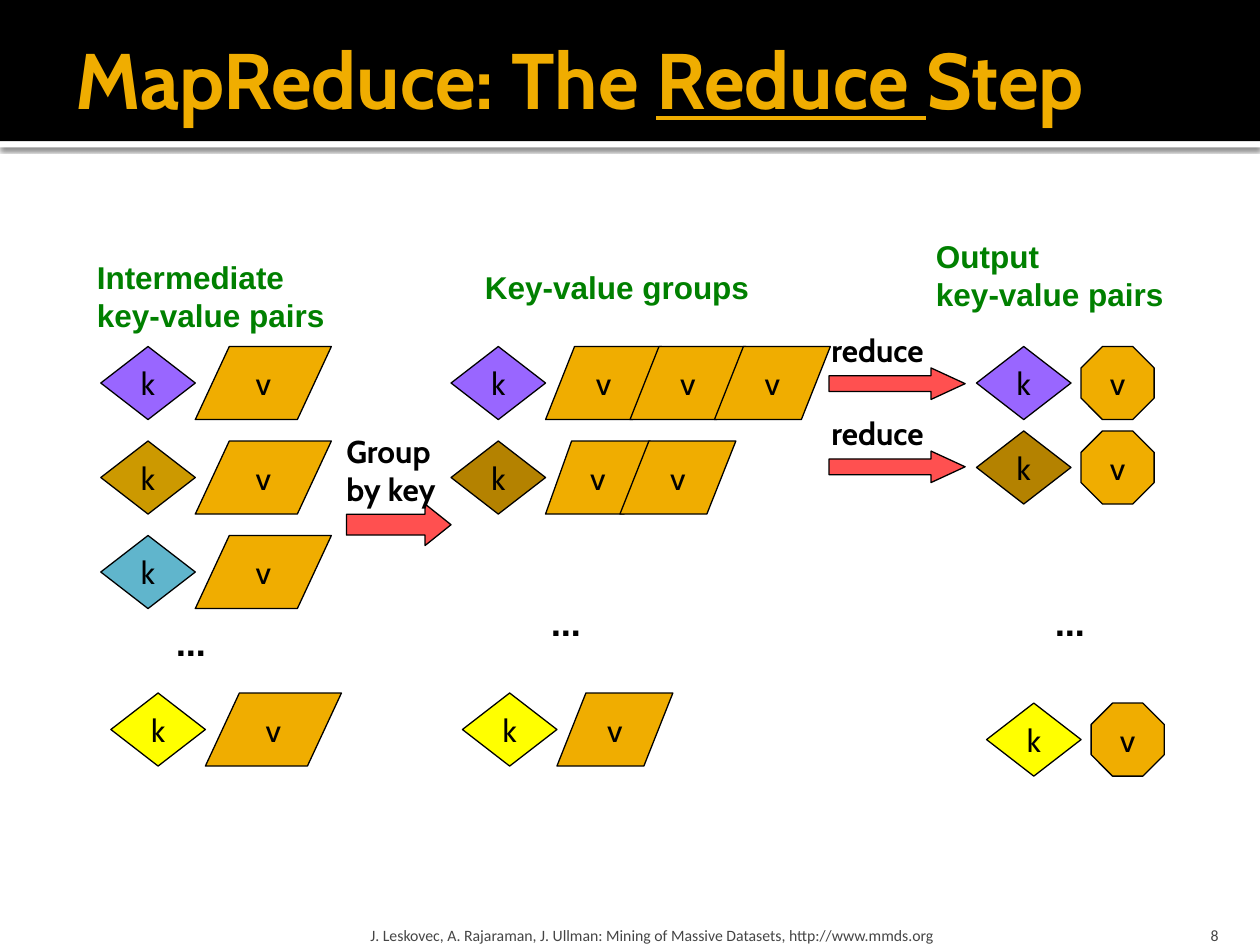
import pptx
import pptx.dml.color
import pptx.enum.shapes
import pptx.enum.text
import pptx.oxml
import pptx.oxml.ns
import pptx.util

Inches = pptx.util.Inches
SHAPE = pptx.enum.shapes.MSO_SHAPE
ALIGN = pptx.enum.text.PP_ALIGN
ANCHOR = pptx.enum.text.MSO_ANCHOR

COLORS = {
    "black": "000000", "white": "FFFFFF", "gold": "F0AD00", "green": "008000",
    "purple": "9966FF", "mustard": "CC9900", "brown": "B48200",
    "teal": "60B5CC", "yellow": "FFFF00", "red": "FF5050", "gray": "454545",
}
KEY_W, CELL_H = 0.75, 0.58


def rgb(name):
    return pptx.dml.color.RGBColor.from_string(COLORS[name])


def format_runs(tf, size, font, color, bold=False, align=ALIGN.LEFT):
    for p in tf.paragraphs:
        p.alignment = align
        for r in p.runs:
            r.font.size = pptx.util.Pt(size)
            r.font.name = font
            r.font.bold = bold
            r.font.color.rgb = rgb(color)


def add_block(slide, kind, box, fill, outlined=True, adjust=(), text=""):
    sp = slide.shapes.add_shape(kind, *map(Inches, box))
    sp.shadow.inherit = False
    sp.fill.solid()
    sp.fill.fore_color.rgb = rgb(fill)
    if outlined:
        sp.line.color.rgb = rgb("black")
        sp.line.width = pptx.util.Pt(0.75)
    else:
        sp.line.fill.background()
    for i, value in enumerate(adjust):
        sp.adjustments[i] = value
    if text:
        tf = sp.text_frame
        tf.word_wrap = False
        tf.vertical_anchor = ANCHOR.MIDDLE
        tf.text = text
        format_runs(tf, 18, "Cabin", "black", align=ALIGN.CENTER)
    return sp


def add_label(slide, box, text, size=18, font="Cabin", color="black", bold=True,
              wrap=False, align=ALIGN.LEFT, anchor=ANCHOR.TOP, margins=None):
    tf = slide.shapes.add_textbox(*map(Inches, box)).text_frame
    tf.word_wrap = wrap
    tf.vertical_anchor = anchor
    if margins:
        (tf.margin_left, tf.margin_top,
         tf.margin_right, tf.margin_bottom) = map(Inches, margins)
    tf.text = text
    format_runs(tf, size, font, color, bold, align)
    return tf


def add_heading(slide, box, text, wrap=True):
    add_label(slide, box, text, font="Arial", color="green", wrap=wrap)


def add_key(slide, x, y, color):
    add_block(slide, SHAPE.DIAMOND, (x, y, KEY_W, CELL_H), color, text="k")


def add_value(slide, x, y, w):
    add_block(slide, SHAPE.PARALLELOGRAM, (x, y, w, CELL_H), "gold",
              adjust=[w / 4 / CELL_H], text="v")


def add_output_pair(slide, x, y, color):
    add_key(slide, x, y, color)
    add_block(slide, SHAPE.OCTAGON, (x + 0.83, y, CELL_H, CELL_H), "gold",
              adjust=[0.293], text="v")


def add_arrow(slide, box, head):
    add_block(slide, SHAPE.RIGHT_ARROW, box, "red", adjust=[0.5, head])


def add_ellipsis(slide, x, y):
    add_label(slide, (x, y, 0.55, 0.5), "…", size=24)


def add_header(slide):
    strip = add_block(slide, SHAPE.RECTANGLE, (0, 1.12, 10, 0.05), "white", outlined=False)
    effects = strip.element.spPr.find(pptx.oxml.ns.qn("a:effectLst"))
    effects.append(pptx.oxml.parse_xml(
        f'<a:outerShdw {pptx.oxml.ns.nsdecls("a")} blurRad="31750" dist="10160" '
        'dir="5400000" algn="tl" rotWithShape="0"><a:srgbClr val="000000">'
        '<a:alpha val="60000"/></a:srgbClr></a:outerShdw>'))
    add_block(slide, SHAPE.RECTANGLE, (0, 0, 10, 1.12), "black", outlined=False)
    tf = add_label(slide, (0.5, 0.08, 9, 1.08), "MapReduce: The ", wrap=True,
                   anchor=ANCHOR.MIDDLE, margins=(0.1, 0.05, 0.05, 0.05))
    for text in ("Reduce ", "Step"):
        r = tf.paragraphs[0].add_run()
        r.text = text
        r.font.underline = text == "Reduce "
    format_runs(tf, 45, "Cabin", "gold", True)


def add_intermediate_pairs(slide):
    add_heading(slide, (0.67, 2, 2.02, 0.71), "Intermediate\nkey-value pairs", wrap=False)
    for x, y, color in ((0.8, 2.75, "purple"), (0.8, 3.5, "mustard"),
                        (0.8, 4.25, "teal"), (0.88, 5.5, "yellow")):
        add_key(slide, x, y, color)
        add_value(slide, x + KEY_W, y, 1.08)
    add_ellipsis(slide, 1.3, 4.83)


def add_groups(slide):
    add_heading(slide, (3.75, 2.08, 2.58, 0.4), "Key-value groups")
    groups = (
        (3.58, 2.75, "purple", [(4.33, 0.92), (5, 0.92), (5.67, 0.92)]),
        (3.58, 3.5, "brown", [(4.33, 0.83), (4.92, 0.92)]),
        (3.67, 5.5, "yellow", [(4.42, 0.92)]),
    )
    for x, y, color, values in groups:
        add_key(slide, x, y, color)
        for value_x, w in values:
            add_value(slide, value_x, y, w)
    add_ellipsis(slide, 4.28, 4.67)


def add_steps(slide):
    add_arrow(slide, (2.75, 4, 0.83, 0.33), 0.625)
    add_label(slide, (2.65, 3.38, 0.91, 0.71), "Group\nby key")
    for y in (2.92, 3.58):
        add_arrow(slide, (6.58, y, 1.08, 0.25), 1.083)
        add_label(slide, (6.5, y - 0.34, 0.94, 0.4), "reduce")


def add_output_pairs(slide):
    add_heading(slide, (7.33, 1.83, 2.25, 0.7), "Output\nkey-value pairs")
    for x, y, color in ((7.75, 2.75, "purple"), (7.75, 3.42, "brown"), (7.83, 5.58, "yellow")):
        add_output_pair(slide, x, y, color)
    add_ellipsis(slide, 8.28, 4.67)


def add_footer(slide):
    style = dict(size=9, font="Calibri", color="gray", bold=False, wrap=True,
                 anchor=ANCHOR.BOTTOM)
    add_label(slide, (2.89, 7.2, 6.02, 0.3),
              "J. Leskovec, A. Rajaraman, J. Ullman: Mining of Massive Datasets, "
              "http://www.mmds.org", margins=(0.05, 0.05, 0.05, 0), **style)
    add_label(slide, (8.97, 7.2, 0.8, 0.3), "8", align=ALIGN.RIGHT,
              margins=(0.1, 0.05, 0.1, 0), **style)


def main():
    prs = pptx.Presentation()
    prs.slide_width, prs.slide_height = Inches(10), Inches(7.5)
    slide = prs.slides.add_slide(prs.slide_layouts[6])
    add_header(slide)
    add_intermediate_pairs(slide)
    add_steps(slide)
    add_output_pairs(slide)
    add_groups(slide)
    add_footer(slide)
    prs.save("out.pptx")


if __name__ == "__main__":
    main()
